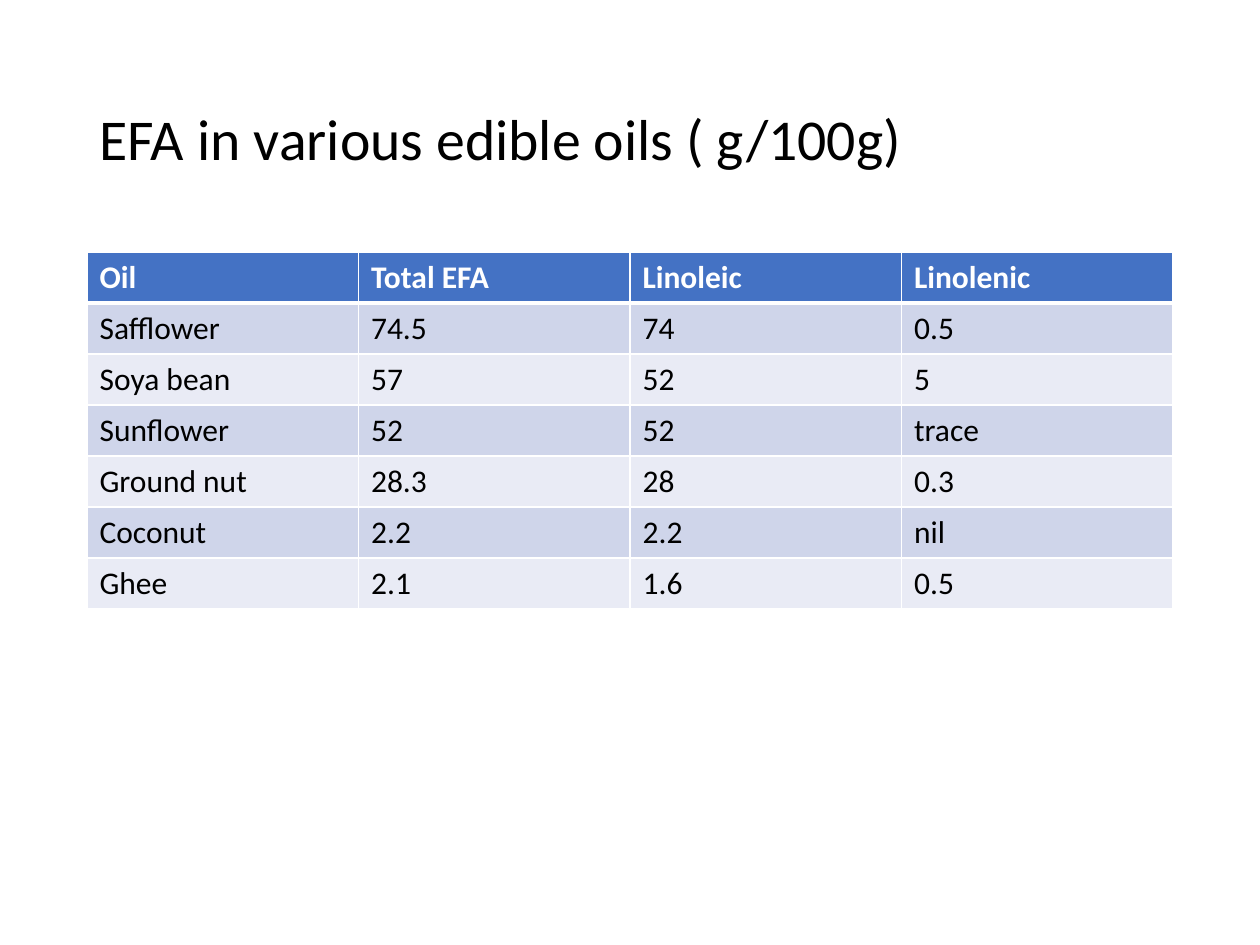
from lxml.etree import SubElement
from pptx import Presentation
from pptx.dml.color import RGBColor
from pptx.enum.text import MSO_ANCHOR
from pptx.oxml.ns import qn
from pptx.util import Emu, Pt

PX_PER_INCH = 126
FONT = "Calibri"
BLACK, WHITE = "000000", "FFFFFF"
HEADER_FILL = "4472C4"
BAND_FILLS = ("CFD5EA", "E9EBF5")
OILS = (
    ("Oil", "Total EFA", "Linoleic", "Linolenic"),
    ("Safflower", "74.5", "74", "0.5"),
    ("Soya bean", "57", "52", "5"),
    ("Sunflower", "52", "52", "trace"),
    ("Ground nut", "28.3", "28", "0.3"),
    ("Coconut", "2.2", "2.2", "nil"),
    ("Ghee", "2.1", "1.6", "0.5"),
)


def px(length):
    """Turn pixels into EMU."""
    return Emu(round(length * 914400 / PX_PER_INCH))


def color(value):
    """Turn a hex string into a colour."""
    return RGBColor.from_string(value)


def write(para, text, size, ink, bold=False):
    """Put text into a paragraph and set its font."""
    para.text = text
    para.font.name = FONT
    para.font.size = Pt(size)
    para.font.bold = bold
    para.font.color.rgb = color(ink)


def set_borders(cell, bottom_width):
    """Draw white lines round a cell."""
    properties = cell._tc.get_or_add_tcPr()
    widths = {"lnL": 1, "lnR": 1, "lnT": 1, "lnB": bottom_width}
    for side, width in widths.items():
        line = SubElement(properties, qn(f"a:{side}"), w=str(Pt(width)))
        fill = SubElement(line, qn("a:solidFill"))
        SubElement(fill, qn("a:srgbClr"), val=WHITE)


def add_title(page, left, top, width, height):
    """Add the heading, centred vertically in its box."""
    box = page.shapes.add_textbox(px(left), px(top), px(width), px(height))
    frame = box.text_frame
    frame.word_wrap = True
    frame.vertical_anchor = MSO_ANCHOR.MIDDLE
    para = frame.paragraphs[0]
    para.line_spacing = 0.9
    write(para, "EFA in various edible oils ( g/100g)", 33, BLACK)


def add_oil_table(page, left, top, width, height):
    """Add the banded table of oils with equal rows and columns."""
    row_count, column_count = len(OILS), len(OILS[0])
    table = page.shapes.add_table(
        row_count, column_count, px(left), px(top), px(width), px(height)
    ).table
    for column in table.columns:
        column.width = px(width / column_count)
    for index, values in enumerate(OILS):
        header = index == 0
        table.rows[index].height = px(height / row_count)
        for cell, value in zip(table.rows[index].cells, values):
            set_borders(cell, 3 if header else 1)
            cell.fill.solid()
            fill = HEADER_FILL if header else BAND_FILLS[(index - 1) % 2]
            cell.fill.fore_color.rgb = color(fill)
            ink = WHITE if header else BLACK
            write(cell.text_frame.paragraphs[0], value, 18, ink, header)


def main():
    """Build and save the deck."""
    deck = Presentation()
    deck.slide_width, deck.slide_height = px(1260), px(945)
    page = deck.slides.add_slide(deck.slide_layouts[6])
    add_title(page, 87, 50, 1086, 183)
    add_oil_table(page, 87, 252, 1086, 357)
    deck.save("out.pptx")


if __name__ == "__main__":
    main()
